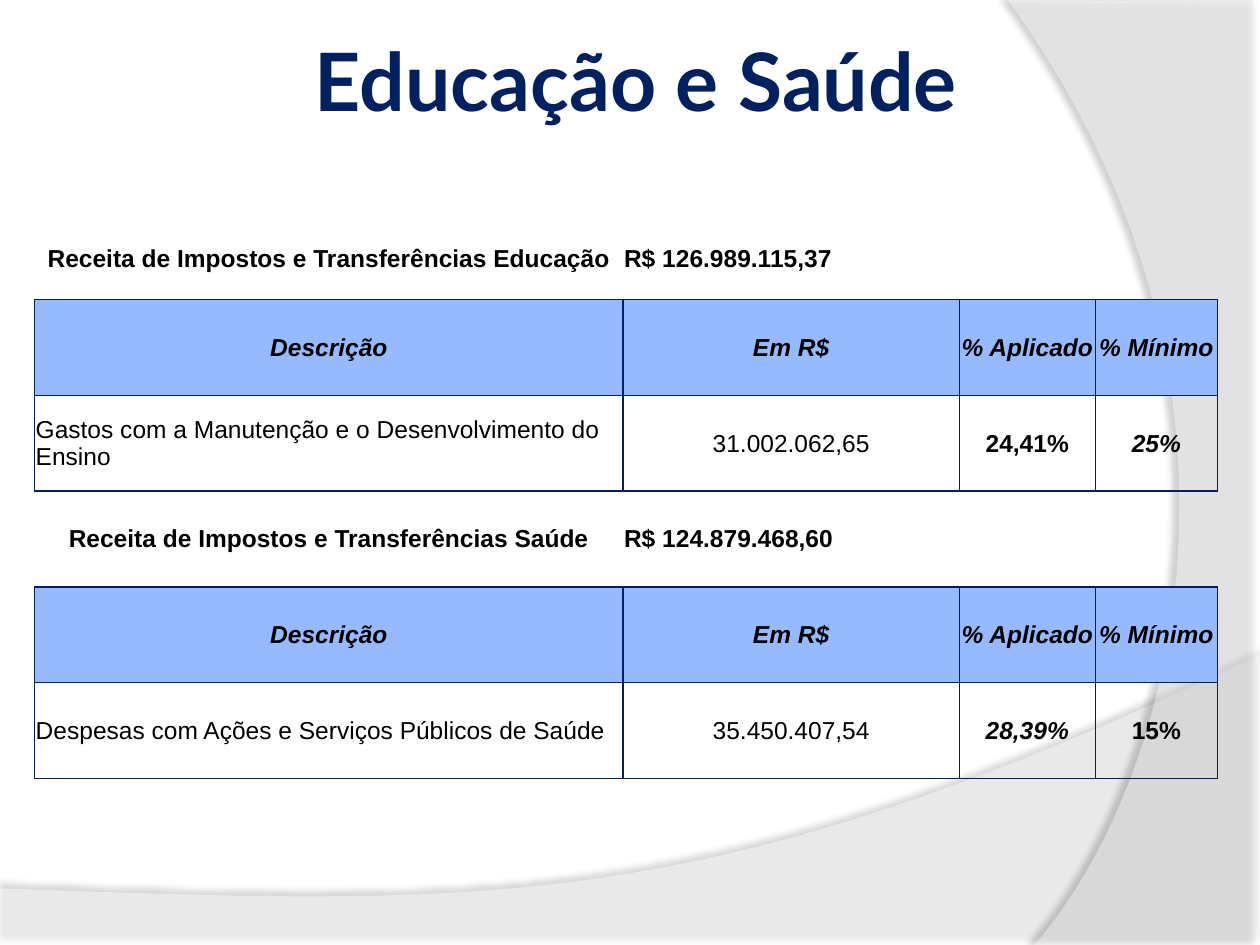
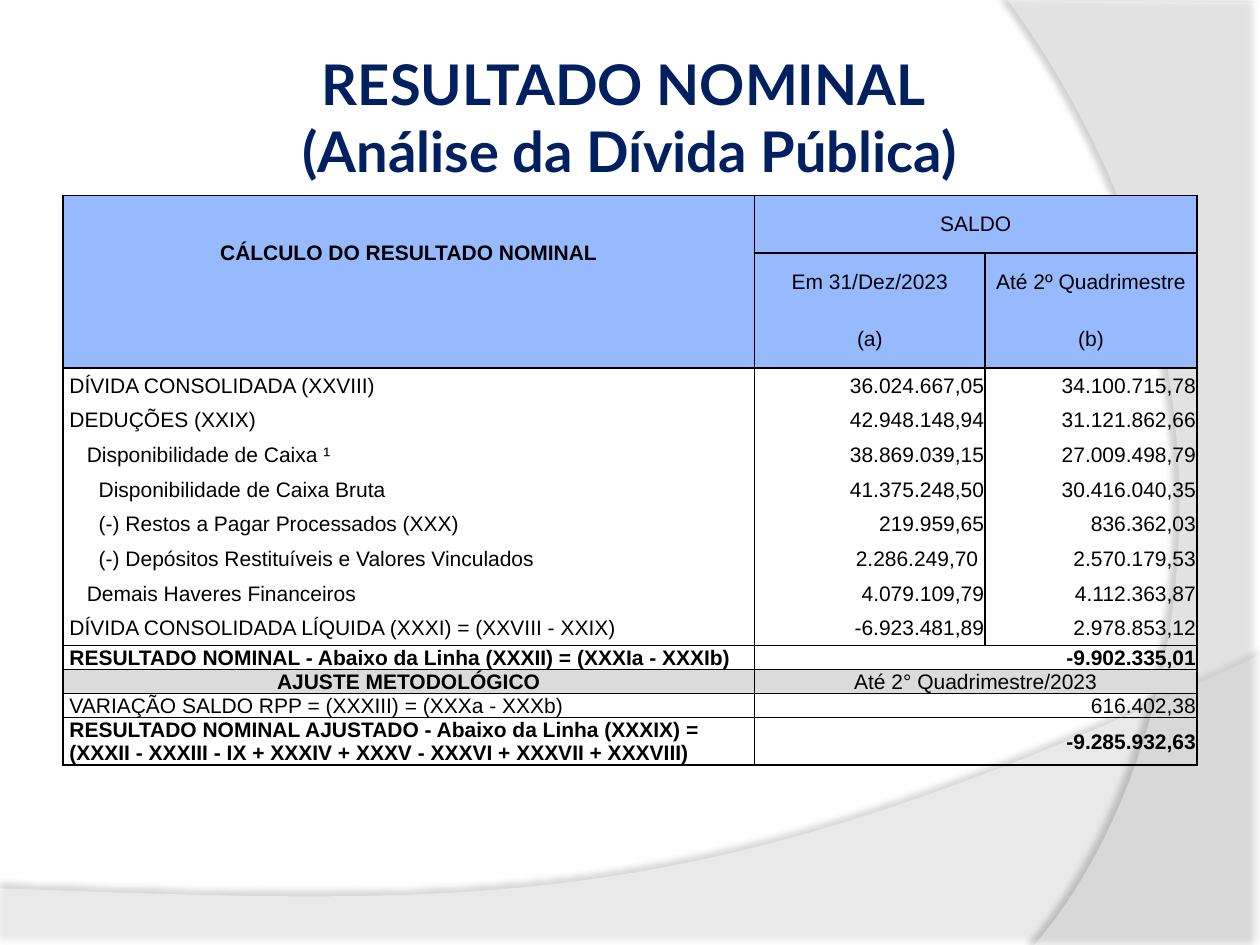
from dataclasses import dataclass

import pptx
import pptx.dml.color
import pptx.enum.text
import pptx.oxml
import pptx.oxml.ns
import pptx.util
from lxml import etree

Cm, Pt = pptx.util.Cm, pptx.util.Pt
ALIGN = pptx.enum.text.PP_ALIGN
ANCHOR = pptx.enum.text.MSO_ANCHOR


@dataclass(frozen=True)
class Theme:
    navy: str = "002060"
    black: str = "000000"
    white: str = "FFFFFF"
    header: str = "97BAFF"
    band: str = "DBDBDB"
    title_font: str = "Lato"
    body_font: str = "Arial"
    big_title: int = 46
    small_title: int = 32
    spending_text: int = 14
    result_text: int = 12


THEME = Theme()
NO_GRID_STYLE = "{2D5ABB26-0587-4C30-8999-92F81FD0307C}"

# Outlines in cm: a corner is (x, y), a curve is its three Bézier points.
SWOOSHES = [
    dict(start=(0, 17.91), opacity=45, shadow=dict(opacity=35, blur=4, distance=3.5, angle=270),
         parts=[(0, 19.07), (25.4, 19.07), (25.4, 13.2),
                ((14.2, 18.52), (9.93, 18.26), (0, 17.91))]),
    dict(start=(25.4, 0.05), opacity=40, shadow=dict(opacity=45, blur=4, distance=4, angle=180),
         parts=[(25.4, 19.05), (20.85, 19.05),
                ((23.75, 15.72), (25.86, 7.62), (20.32, 0))]),
]

# Cell styles: how the text is set, and what fills the cell.
STYLES = {
    "caption": dict(bold=True, align=ALIGN.CENTER),
    "amount": dict(bold=True),
    "head": dict(bold=True, italic=True, align=ALIGN.CENTER, fill=THEME.header),
    "text": dict(),
    "center": dict(align=ALIGN.CENTER),
    "strong": dict(bold=True, align=ALIGN.CENTER),
    "slanted": dict(bold=True, italic=True, align=ALIGN.CENTER),
    "topic": dict(bold=True, align=ALIGN.CENTER, fill=THEME.header),
    "column": dict(align=ALIGN.CENTER, fill=THEME.header),
    "label": dict(side=0.13),
    "label1": dict(side=0.13, indent=0.35),
    "label2": dict(side=0.13, indent=0.59),
    "total": dict(side=0.13, bold=True),
    "number": dict(align=ALIGN.RIGHT),
    "sum": dict(align=ALIGN.RIGHT, bold=True),
    "band_head": dict(bold=True, align=ALIGN.CENTER, fill=THEME.band),
    "band": dict(align=ALIGN.CENTER, fill=THEME.band),
}

SPENDING_HEAD = ["Descrição", "Em R$", "% Aplicado", "% Mínimo "]
SPENDING = [
    dict(caption="Receita de Impostos e Transferências Educação", revenue="R$ 126.989.115,37",
         values=["Gastos com a Manutenção e o Desenvolvimento do Ensino",
                 "31.002.062,65", "24,41%", "25%"],
         styles=["text", "center", "strong", "slanted"]),
    dict(caption="Receita de Impostos e Transferências Saúde", revenue="R$ 124.879.468,60",
         values=["Despesas com Ações e Serviços Públicos de Saúde",
                 "35.450.407,54", "28,39%", "15%"],
         styles=["text", "center", "slanted", "strong"]),
]

RESULT_HEAD = [
    ["CÁLCULO DO RESULTADO NOMINAL", "SALDO", ""],
    ["", "Em 31/Dez/2023", "Até 2º Quadrimestre"],
    ["", "(a)", "(b)"],
]
DEBT = [
    ("label", "DÍVIDA CONSOLIDADA (XXVIII)", "36.024.667,05", "34.100.715,78"),
    ("label", "DEDUÇÕES (XXIX)", "42.948.148,94", "31.121.862,66"),
    ("label1", "Disponibilidade de Caixa ¹", "38.869.039,15", "27.009.498,79"),
    ("label2", "Disponibilidade de Caixa Bruta", "41.375.248,50", "30.416.040,35"),
    ("label2", "(-) Restos a Pagar Processados (XXX)", "219.959,65", "836.362,03"),
    ("label2", "(-) Depósitos Restituíveis e Valores Vinculados", "2.286.249,70 ",
     "2.570.179,53"),
    ("label1", "Demais Haveres Financeiros", "4.079.109,79", "4.112.363,87"),
    ("label", "DÍVIDA CONSOLIDADA LÍQUIDA (XXXI) = (XXVIII - XXIX)", "-6.923.481,89",
     "2.978.853,12"),
]
CLOSING = [
    ("total", "RESULTADO NOMINAL - Abaixo da Linha (XXXII) = (XXXIa - XXXIb)",
     "sum", "-9.902.335,01"),
    ("band_head", "AJUSTE METODOLÓGICO", "band", "Até 2° Quadrimestre/2023"),
    ("label", "VARIAÇÃO SALDO RPP = (XXXIII) = (XXXa - XXXb)", "number", "616.402,38"),
    ("total", "RESULTADO NOMINAL AJUSTADO - Abaixo da Linha (XXXIX) = "
     "(XXXII - XXXIII - IX + XXXIV + XXXV - XXXVI + XXXVII + XXXVIII)",
     "sum", "-9.285.932,63"),
]


def rgb(color):
    return pptx.dml.color.RGBColor.from_string(color)


def set_all(target, **values):
    for name, value in values.items():
        setattr(target, name, value)


def add_xml(parent, tag, **attributes):
    return etree.SubElement(parent, pptx.oxml.ns.qn(tag),
                            {name: str(value) for name, value in attributes.items()})


def bezier(points, steps=40):
    (ax, ay), (bx, by), (cx, cy), (dx, dy) = points
    for step in range(1, steps + 1):
        t = step / steps
        a, b, c, d = (1 - t) ** 3, 3 * t * (1 - t) ** 2, 3 * t * t * (1 - t), t ** 3
        yield a * ax + b * bx + c * cx + d * dx, a * ay + b * by + c * cy + d * dy


def add_swoosh(slide, layout, swoosh):
    """Draw a translucent outline and move it behind everything on the layout."""
    outline = [swoosh["start"]]
    for part in swoosh["parts"]:
        is_curve = isinstance(part[0], tuple)
        outline.extend(list(bezier([outline[-1], *part])) if is_curve else [part])
    points = [(Cm(x), Cm(y)) for x, y in outline]
    builder = slide.shapes.build_freeform(*points[0])
    builder.add_line_segments(points[1:], close=True)
    shape = builder.convert_to_shape()
    shape.fill.solid()
    shape.fill.fore_color.rgb = rgb(THEME.white)
    shape.line.fill.background()
    properties = shape._element.spPr
    color = properties.find(".//" + pptx.oxml.ns.qn("a:srgbClr"))
    add_xml(color, "a:alpha", val=swoosh["opacity"] * 1000)
    shadow = swoosh["shadow"]
    outer = add_xml(add_xml(properties, "a:effectLst"), "a:outerShdw",
                    blurRad=Pt(shadow["blur"]), dist=Pt(shadow["distance"]),
                    dir=shadow["angle"] * 60000, algn="ctr", rotWithShape=0)
    add_xml(add_xml(outer, "a:srgbClr", val=THEME.black), "a:alpha",
            val=shadow["opacity"] * 1000)
    layout.shapes._spTree.insert_element_before(shape._element, "p:sp")


def set_title(slide, text, size, left, top):
    title = slide.shapes.title
    set_all(title, left=Cm(left), top=Cm(top), width=Cm(22.86), height=Cm(3.18))
    frame = title.text_frame
    frame.text = text
    set_all(frame, vertical_anchor=ANCHOR.MIDDLE, word_wrap=True,
            auto_size=pptx.enum.text.MSO_AUTO_SIZE.NONE, margin_left=Cm(0.13),
            margin_right=Cm(0.13), margin_top=Cm(0.13), margin_bottom=Cm(0.13))
    paragraph = frame.paragraphs[0]
    paragraph.alignment = ALIGN.CENTER
    for run in paragraph.runs:
        set_all(run.font, name=THEME.title_font, size=Pt(size), bold=True)
        run.font.color.rgb = rgb(THEME.navy)


def add_table(slide, left, top, widths, heights):
    table = slide.shapes.add_table(len(heights), len(widths), Cm(left), Cm(top),
                                   Cm(sum(widths)), Cm(sum(heights))).table
    set_all(table, first_row=False, horz_banding=False)
    table._tbl.tblPr.find(pptx.oxml.ns.qn("a:tableStyleId")).text = NO_GRID_STYLE
    for column, width in zip(table.columns, widths):
        column.width = Cm(width)
    for row, height in zip(table.rows, heights):
        row.height = Cm(height)
    return table


def fill_cell(cell, text, style, size, border, sides):
    """Write one cell; sides holds the letters of its drawn borders (L, R, T, B)."""
    look = STYLES[style]
    side = Cm(look.get("side", 0.02))
    set_all(cell, text=text, vertical_anchor=ANCHOR.MIDDLE, margin_left=side,
            margin_right=side, margin_top=Cm(0.01), margin_bottom=0)
    paragraph = cell.text_frame.paragraphs[0]
    paragraph.alignment = look.get("align", ALIGN.LEFT)
    if "indent" in look:
        paragraph._p.get_or_add_pPr().set("marL", str(Cm(look["indent"])))
    for run in paragraph.runs:
        set_all(run.font, name=THEME.body_font, size=Pt(size),
                bold=look.get("bold", False), italic=look.get("italic", False))
        run.font.color.rgb = rgb(THEME.black)
    if not text:
        add_xml(paragraph._p, "a:endParaRPr", sz=size * 100)
    properties = cell._tc.get_or_add_tcPr()
    for letter in "LRTB":
        line = add_xml(properties, "a:ln" + letter, w=Pt(1))
        if letter in sides:
            add_xml(add_xml(line, "a:solidFill"), "a:srgbClr", val=border)
        else:
            add_xml(line, "a:noFill")
    if "fill" in look:
        cell.fill.solid()
        cell.fill.fore_color.rgb = rgb(look["fill"])
    else:
        cell.fill.background()


def build_spending(slide):
    set_title(slide, " Educação e Saúde", THEME.big_title, 1.19, 0)
    table = add_table(slide, 0.7, 4.11, [11.86, 6.78, 2.74, 2.46], [1.93] * 6)
    for group, area in enumerate(SPENDING):
        rows = [
            ([area["caption"], area["revenue"], "", ""],
             ["caption", "amount", "text", "text"], "TB" if group else "B"),
            (SPENDING_HEAD, ["head"] * 4, "LRTB"),
            (area["values"], area["styles"], "LRTB"),
        ]
        for offset, (texts, styles, sides) in enumerate(rows):
            for column, (text, style) in enumerate(zip(texts, styles)):
                fill_cell(table.cell(3 * group + offset, column), text, style,
                          THEME.spending_text, THEME.navy, sides)
    for column in (0, 1):
        set_all(table.cell(0, column), vertical_anchor=ANCHOR.BOTTOM, margin_bottom=Cm(0.54))


def build_result(slide):
    set_title(slide, "RESULTADO NOMINAL \v(Análise da Dívida Pública)",
              THEME.small_title, 1.27, 0.76)
    heights = [1.16] * 3 + [0.7] * len(DEBT) + [0.46] * 3 + [0.94]
    table = add_table(slide, 1.27, 3.94, [13.94, 4.65, 4.27], heights)
    first_closing = len(RESULT_HEAD) + len(DEBT)
    table.cell(0, 0).merge(table.cell(1, 0))
    for row in [0, *range(first_closing, len(heights))]:
        table.cell(row, 1).merge(table.cell(row, 2))

    rows = [(texts, ["topic", "column", "column"]) for texts in RESULT_HEAD]
    rows += [(texts, [style, "number", "number"]) for style, *texts in DEBT]
    rows += [([label, value, ""], [label_style, value_style, value_style])
             for label_style, label, value_style, value in CLOSING]
    edges = {0: "TB", 1: "T", 2: "B", 3: "T", first_closing - 1: "B"}
    edges.update((row, "TB") for row in range(first_closing, len(rows)))
    for row, (texts, styles) in enumerate(rows):
        for column, (text, style) in enumerate(zip(texts, styles)):
            cell = table.cell(row, column)
            sides = "LR" + edges.get(row, "")
            if column == 0 and row < 2:
                sides = "LRT" if row == 0 else "LR"
            elif cell.is_spanned:
                sides = sides.replace("L", "")
            fill_cell(cell, text, style, THEME.result_text, THEME.black, sides)


def main():
    presentation = pptx.Presentation()
    set_all(presentation, slide_width=Cm(25.4), slide_height=Cm(19.05))
    layout = presentation.slide_layouts[5]
    spending, result = (presentation.slides.add_slide(layout) for _ in range(2))
    for swoosh in reversed(SWOOSHES):
        add_swoosh(spending, layout, swoosh)
    build_spending(spending)
    build_result(result)
    presentation.save("out.pptx")


if __name__ == "__main__":
    main()
